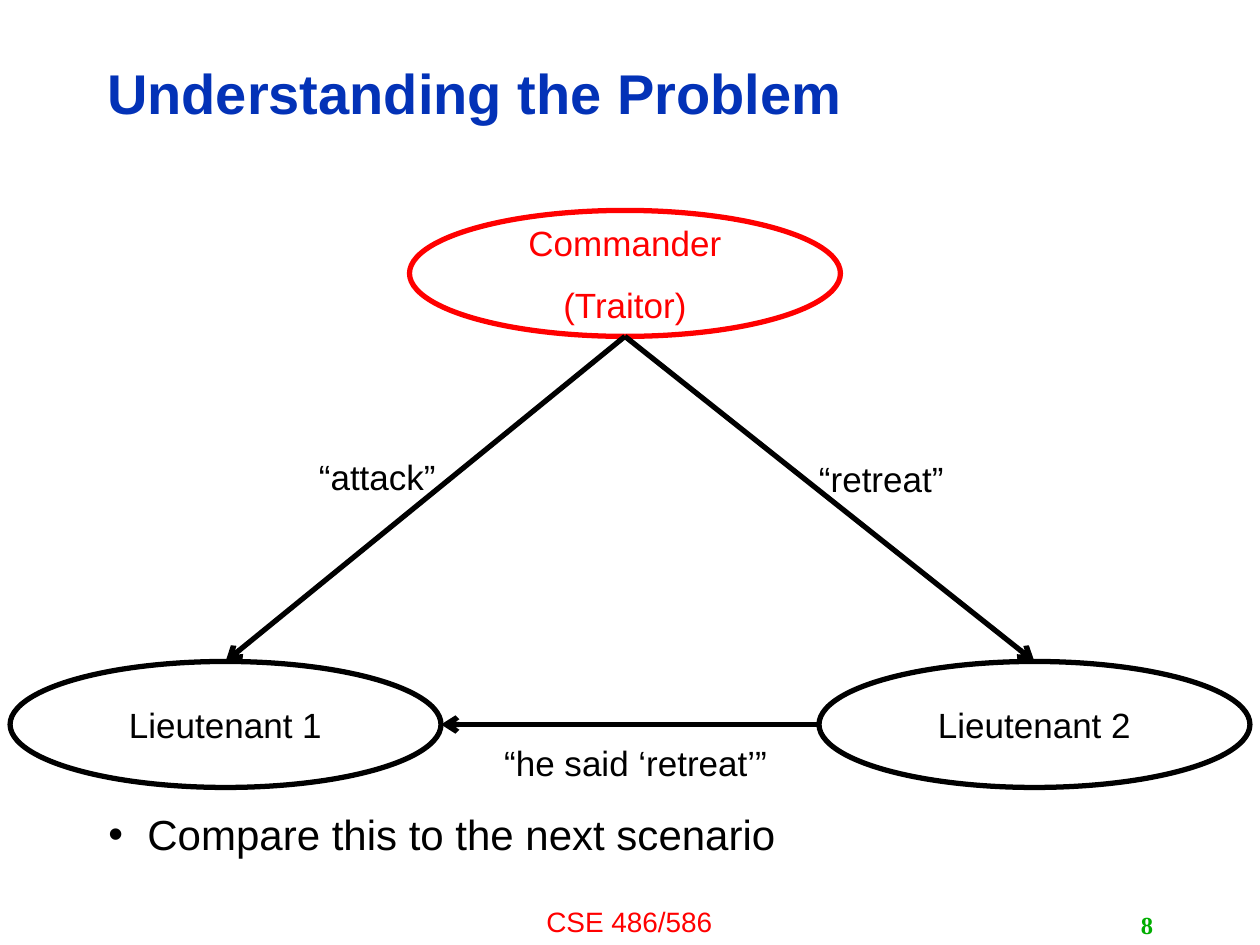
from dataclasses import dataclass

from lxml.etree import SubElement
from pptx import Presentation
from pptx.dml.color import RGBColor
from pptx.enum.shapes import MSO_CONNECTOR, MSO_SHAPE
from pptx.enum.text import MSO_ANCHOR, MSO_AUTO_SIZE, PP_ALIGN
from pptx.oxml.ns import qn
from pptx.util import Inches, Pt


@dataclass(frozen=True)
class Theme:
    font: str = "Arial"
    number_font: str = "Times New Roman"
    title_color: str = "0332B7"
    ink: str = "000000"
    alert: str = "FF0000"
    number_color: str = "00AE00"
    paper: str = "FFFFFF"
    title_size: int = 32
    body_size: int = 24
    label_size: int = 20
    footer_size: int = 16
    number_size: int = 14
    line_width: int = 3
    paragraph_gap: int = 11


THEME = Theme()

TITLE = ("Understanding the Problem", (0.75, 0.36, 7.98, 0.81))
BULLET = ("Compare this to the next scenario", (0.76, 6.37, 8.4, 0.5))
FOOTER = ("CSE 486/586", (3.33, 7.13, 3.33, 0.37))
NUMBER = ("8", (7.17, 7.18, 2.08, 0.32))

NODE_SIZE = (3.42, 1)
# name: (lines of text, left, top, color)
NODES = {
    "commander": (["Commander", "(Traitor)"], 3.25, 1.67, THEME.alert),
    "first": (["Lieutenant 1"], 0.08, 5.25, THEME.ink),
    "second": (["Lieutenant 2"], 6.5, 5.25, THEME.ink),
}
# (sender, side), (receiver, side), message, message box
ORDERS = [
    (("commander", "bottom"), ("first", "top"), "“attack”", (2.33, 3.56, 1.33, 0.44)),
    (("commander", "bottom"), ("second", "top"), "“retreat”", (6.33, 3.58, 1.33, 0.44)),
    (("second", "left"), ("first", "right"), "“he said ‘retreat’”", (3.67, 5.83, 2.75, 0.44)),
]
# Fractions of a node's width and height
SIDES = {"top": (0.5, 0), "left": (0, 0.5), "bottom": (0.5, 1), "right": (1, 0.5)}


def inches(values):
    return [Inches(value) for value in values]


def color(value):
    return RGBColor.from_string(value)


def write(shape, lines, size=THEME.label_size, ink=THEME.ink, font=THEME.font, bold=False,
          align=PP_ALIGN.CENTER, anchor=MSO_ANCHOR.MIDDLE, spacing=1.0, wrap=True):
    frame = shape.text_frame
    frame.auto_size = MSO_AUTO_SIZE.NONE
    frame.word_wrap = wrap
    frame.vertical_anchor = anchor
    for index, line in enumerate(lines):
        para = frame.add_paragraph() if index else frame.paragraphs[0]
        para.alignment = align
        para.line_spacing = spacing
        para.space_before = Pt(THEME.paragraph_gap if index else 0)
        span = para.add_run()
        span.text = line
        span.font.name = font
        span.font.size = Pt(size)
        span.font.bold = bold
        span.font.color.rgb = color(ink)


def place(shape, box):
    shape.left, shape.top, shape.width, shape.height = inches(box)


def add_label(page, text, box, **style):
    write(page.shapes.add_textbox(*inches(box)), [text], **style)


def add_bullet(para, indent):
    properties = para._p.get_or_add_pPr()
    properties.set("marL", str(Inches(indent)))
    properties.set("indent", str(-Inches(indent)))
    SubElement(properties, qn("a:buChar")).set("char", "•")


def add_node(page, lines, left, top, ink):
    node = page.shapes.add_shape(MSO_SHAPE.OVAL, *inches((left, top, *NODE_SIZE)))
    node.shadow.inherit = False
    node.fill.solid()
    node.fill.fore_color.rgb = color(THEME.paper)
    node.line.color.rgb = color(ink)
    node.line.width = Pt(THEME.line_width)
    write(node, lines, ink=ink)


def side_point(name, side):
    _, left, top, _ = NODES[name]
    across, down = SIDES[side]
    return inches((left + across * NODE_SIZE[0], top + down * NODE_SIZE[1]))


def add_arrow(page, start, end):
    arrow = page.shapes.add_connector(
        MSO_CONNECTOR.STRAIGHT, *side_point(*start), *side_point(*end))
    arrow.line.color.rgb = color(THEME.ink)
    arrow.line.width = Pt(THEME.line_width)
    SubElement(arrow.line._get_or_add_ln(), qn("a:tailEnd")).set("type", "arrow")
    SubElement(arrow._element.spPr, qn("a:effectLst"))


def main():
    deck = Presentation()
    deck.slide_width, deck.slide_height = inches((10, 7.5))
    page = deck.slides.add_slide(deck.slide_layouts[1])
    title, body = page.shapes.title, page.placeholders[1]

    text, box = TITLE
    place(title, box)
    write(title, [text], size=THEME.title_size, ink=THEME.title_color, bold=True,
          align=PP_ALIGN.LEFT, spacing=0.9)

    text, box = BULLET
    place(body, box)
    write(body, [text], size=THEME.body_size, align=PP_ALIGN.LEFT,
          anchor=MSO_ANCHOR.BOTTOM, spacing=0.9)
    add_bullet(body.text_frame.paragraphs[0], indent=0.31)

    add_label(page, *FOOTER, size=THEME.footer_size, ink=THEME.alert)
    add_label(page, *NUMBER, size=THEME.number_size, ink=THEME.number_color,
              font=THEME.number_font, bold=True, align=PP_ALIGN.RIGHT, wrap=False)

    for node in NODES.values():
        add_node(page, *node)
    for start, end, message, box in ORDERS:
        add_arrow(page, start, end)
        add_label(page, message, box)

    deck.save("out.pptx")


if __name__ == "__main__":
    main()
